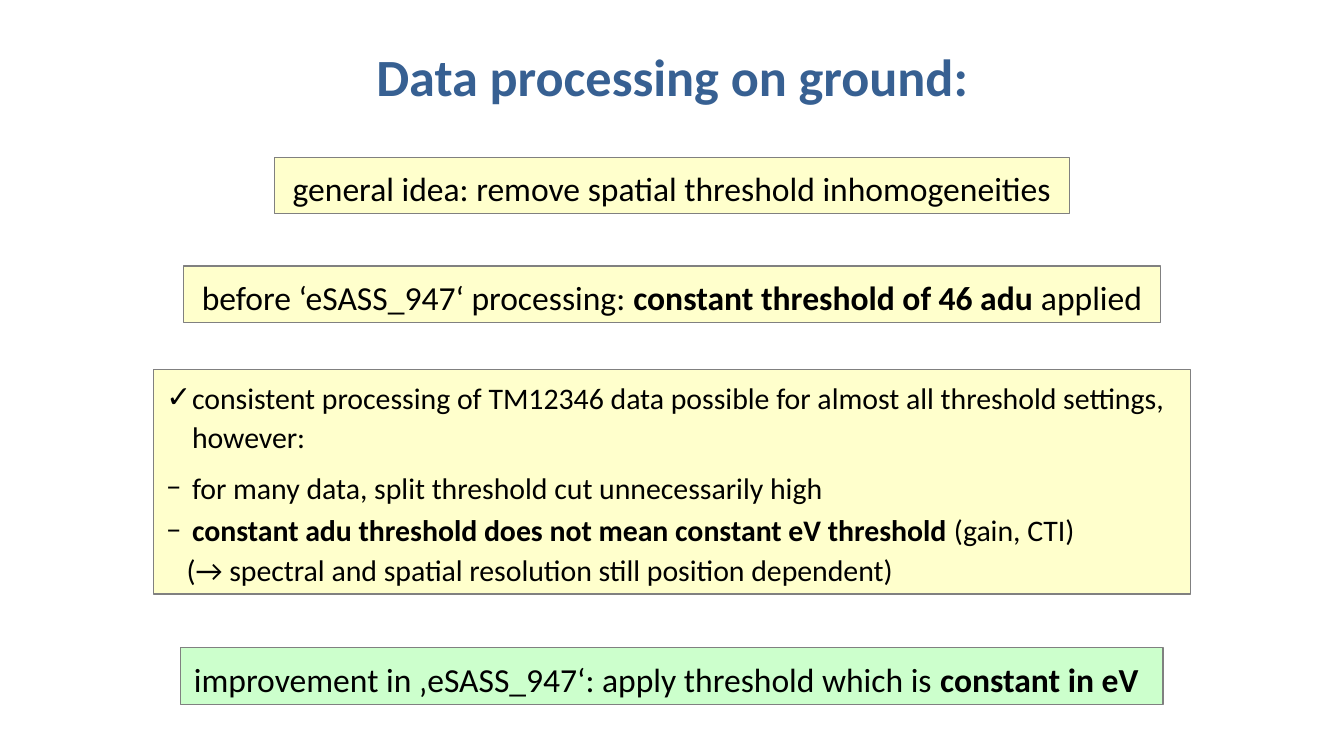
import pptx
import pptx.dml.color
import pptx.enum.shapes
import pptx.enum.text
import pptx.oxml.ns
import pptx.util
from dataclasses import dataclass
from lxml import etree

Inches = pptx.util.Inches
Align = pptx.enum.text.PP_ALIGN
PAGE_WIDTH = 10
PAGE_HEIGHT = PAGE_WIDTH * 9 / 16


@dataclass(frozen=True)
class Theme:
    font: str = "Calibri"
    title: str = "376092"
    ink: str = "000000"
    border: str = "808080"
    yellow: str = "FFFFCC"
    green: str = "CCFFCC"
    title_size: int = 28
    statement_size: int = 18
    detail_size: int = 16


THEME = Theme()


def rgb(value):
    return pptx.dml.color.RGBColor.from_string(value)


def apply_format(target, values):
    for name, value in values.items():
        setattr(target, name, value)


def set_up_frame(box):
    apply_format(box.text_frame, {
        "word_wrap": False,
        "auto_size": pptx.enum.text.MSO_AUTO_SIZE.SHAPE_TO_FIT_TEXT,
        "vertical_anchor": pptx.enum.text.MSO_ANCHOR.TOP,
    })
    return box.text_frame


def add_title_box(page, top, width, height):
    """Add an unfilled text box centred on the page."""
    left = (PAGE_WIDTH - width) / 2
    return set_up_frame(page.shapes.add_textbox(
        Inches(left), Inches(top), Inches(width), Inches(height)))


def add_panel(page, top, width, height, fill):
    """Add a bordered rectangle centred on the page."""
    left = (PAGE_WIDTH - width) / 2
    panel = page.shapes.add_shape(
        pptx.enum.shapes.MSO_SHAPE.RECTANGLE,
        Inches(left), Inches(top), Inches(width), Inches(height))
    panel.shadow.inherit = False
    panel.fill.solid()
    panel.fill.fore_color.rgb = rgb(fill)
    panel.line.color.rgb = rgb(THEME.border)
    panel.line.width = pptx.util.Pt(0.75)
    return set_up_frame(panel)


def set_indent(para, margin, bullet=None):
    """Indent a paragraph, hanging its bullet if it has one."""
    properties = para._p.get_or_add_pPr()
    properties.set("marL", str(Inches(margin)))
    properties.set("indent", str(Inches(-margin if bullet else 0)))
    if bullet:
        for tag, name, value in (("a:buFont", "typeface", THEME.font),
                                 ("a:buChar", "char", bullet)):
            etree.SubElement(properties, pptx.oxml.ns.qn(tag)).set(name, value)


def write_spans(para, spans, size, color=THEME.ink, align=Align.LEFT, spacing=1.1):
    """Write (text, bold) spans; a newline in the text breaks the line."""
    apply_format(para, {"alignment": align, "line_spacing": spacing})
    for text, bold in spans:
        for number, line in enumerate(text.split("\n")):
            if number:
                para.add_line_break()
            span = para.add_run()
            span.text = line
            apply_format(span.font, {
                "name": THEME.font, "size": pptx.util.Pt(size), "bold": bold})
            span.font.color.rgb = rgb(color)


def add_statement(page, top, width, spans, fill=THEME.yellow, align=Align.CENTER):
    frame = add_panel(page, top, width, 0.42, fill)
    write_spans(frame.paragraphs[0], spans, THEME.statement_size, align=align)


def add_details(page, top, width, height, items):
    frame = add_panel(page, top, width, height, THEME.yellow)
    for number, (bullet, margin, spacing, spans) in enumerate(items):
        para = frame.add_paragraph() if number else frame.paragraphs[0]
        set_indent(para, margin, bullet)
        write_spans(para, spans, THEME.detail_size, spacing=spacing)


def main():
    deck = pptx.Presentation()
    deck.slide_width, deck.slide_height = Inches(PAGE_WIDTH), Inches(PAGE_HEIGHT)
    page = deck.slides.add_slide(deck.slide_layouts[6])

    # Title
    title = add_title_box(page, 0.19, 4.65, 0.63)
    write_spans(title.paragraphs[0], [("Data processing on ground:", True)],
                THEME.title_size, THEME.title, Align.CENTER, 1.2)

    # Idea and earlier processing
    add_statement(page, 1.17, 5.92, [
        ("general idea: remove spatial threshold inhomogeneities", False)])
    add_statement(page, 1.98, 7.27, [
        ("before ‘eSASS_947‘ processing: ", False),
        ("constant threshold of 46 adu ", True),
        ("applied", False)])

    # Consequences: bullet, margin, line spacing, spans
    add_details(page, 2.75, 7.72, 1.67, [
        ("✓", 0.19, 1.1, [("consistent processing of TM12346 data possible for "
                           "almost all threshold settings,\nhowever:", False)]),
        ("−", 0.19, 1.4, [
            ("for many data, split threshold cut unnecessarily high", False)]),
        ("−", 0.19, 1.2, [
            ("constant adu threshold does not mean constant eV threshold ", True),
            ("(gain, CTI)", False)]),
        (None, 0.15, 1.1, [
            ("(→ spectral and spatial resolution still position dependent)", False)]),
    ])

    # Improvement
    add_statement(page, 4.82, 7.31, [
        ("improvement in ‚eSASS_947‘: apply threshold which is ", False),
        ("constant in eV", True)], THEME.green, Align.LEFT)

    deck.save("out.pptx")


if __name__ == "__main__":
    main()
